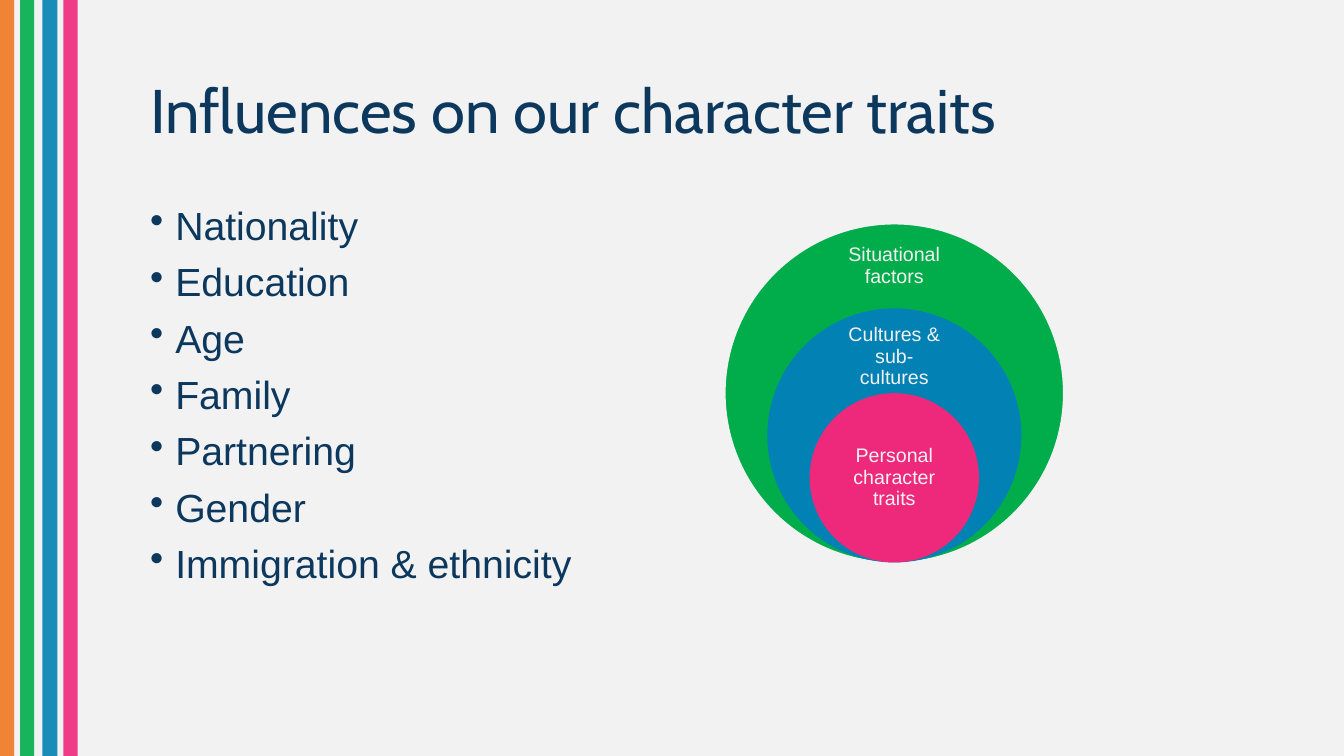
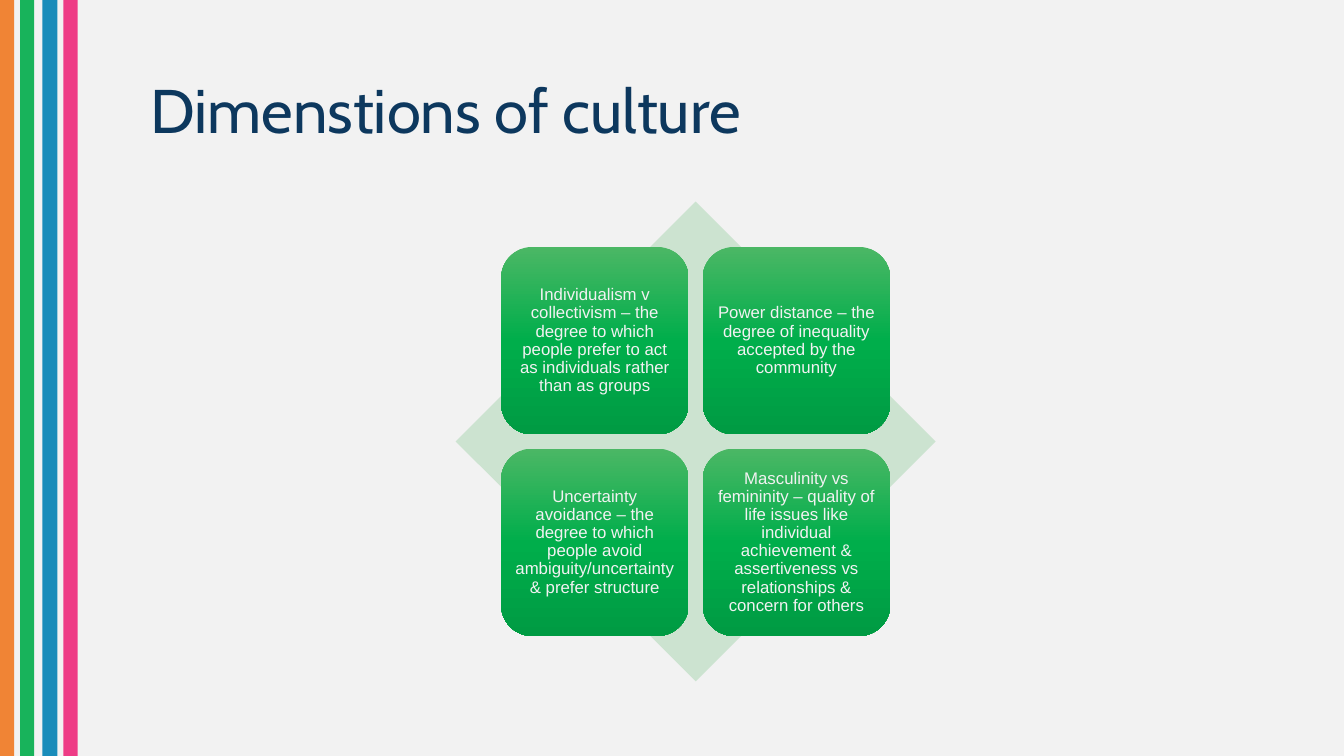
import pptx
import pptx.dml.color
import pptx.enum.shapes
import pptx.enum.text
import pptx.oxml.ns
import pptx.util
from lxml import etree

Inches = pptx.util.Inches
Pt = pptx.util.Pt
qn = pptx.oxml.ns.qn
SHAPE = pptx.enum.shapes.MSO_SHAPE
ALIGN = pptx.enum.text.PP_ALIGN
ANCHOR = pptx.enum.text.MSO_ANCHOR

NAVY, PALE, MINT = "0D385E", "F2F2F2", "CCE3D0"
ORANGE, GREEN, BLUE, PINK = "F07921", "01AD4B", "0281B4", "EE297B"
STRIPES = [(0, 0.14, ORANGE), (0.2, 0.14, GREEN), (0.42, 0.15, BLUE), (0.63, 0.14, PINK)]
CARD_GRADIENT = [(0, "4BB765"), (50, "00AE4B"), (100, "009B43")]
TITLE_BOX = (1.39, 0.4, 8.76, 1.45)
TITLE_FONT = {"name": "Cabin", "size": Pt(44)}
BODY_FONT = {"name": "Arial", "size": Pt(28)}
CIRCLE_FONT = {"name": "Arial", "size": Pt(14)}
CARD_FONT = {"name": "Arial", "size": Pt(12)}

INFLUENCES = ["Nationality", "Education", "Age", "Family", "Partnering", "Gender",
              "Immigration & ethnicity"]
CIRCLES = [
    ("Situational factors", GREEN, 0.17, 0.5),
    ("Cultures & sub-cultures", BLUE, 0.16, 0.64),
    ("Personal character traits", PINK, 0.42, 0.84),
]
DIMENSIONS = [
    "Individualism v collectivism – the degree to which people prefer to act as "
    "individuals rather than as groups",
    "Power distance – the degree of inequality accepted by the community",
    "Uncertainty avoidance – the degree to which people avoid ambiguity/uncertainty "
    "& prefer structure",
    "Masculinity vs femininity – quality of life issues like individual achievement "
    "& assertiveness vs relationships & concern for others",
]


def color(value):
    """Turn a hex string into a colour."""
    return pptx.dml.color.RGBColor.from_string(value)


def apply(target, values):
    """Set every attribute named in a dict of format values."""
    for name, value in values.items():
        setattr(target, name, value)


def place(box):
    """Convert a box in inches to lengths."""
    return [Inches(value) for value in box]


def add_shape(slide, kind, box, fill):
    """Add a flat shape without outline or shadow."""
    shape = slide.shapes.add_shape(kind, *place(box))
    shape.shadow.inherit = False
    shape.fill.solid()
    shape.fill.fore_color.rgb = color(fill)
    shape.line.fill.background()
    return shape


def format_frame(frame, anchor, inset=(0.1, 0.05)):
    """Set wrapping, anchor and insets of a text frame."""
    across, down = map(Inches, inset)
    apply(frame, {"word_wrap": True, "auto_size": pptx.enum.text.MSO_AUTO_SIZE.NONE,
                  "vertical_anchor": anchor, "margin_left": across, "margin_right": across,
                  "margin_top": down, "margin_bottom": down})


def write(paragraph, text, font, text_color, alignment=ALIGN.LEFT):
    """Write one formatted run in a paragraph."""
    apply(paragraph, {"alignment": alignment, "line_spacing": 0.9})
    run = paragraph.add_run()
    run.text = text
    apply(run.font, font)
    run.font.color.rgb = color(text_color)


def add_bullet(paragraph):
    """Give a paragraph a hanging round bullet."""
    properties = paragraph._p.get_or_add_pPr()
    properties.set("marL", str(Inches(0.25)))
    properties.set("indent", str(-Inches(0.25)))
    etree.SubElement(properties, qn("a:buChar"), char="•")


def set_gradient(shape, stops):
    """Fill a shape with a gradient from top to bottom."""
    shape.fill.gradient()
    shape.fill.gradient_angle = 270
    stop_list = shape.element.spPr.find(".//" + qn("a:gsLst"))
    for stop in list(stop_list):
        stop_list.remove(stop)
    for position, value in stops:
        stop = etree.SubElement(stop_list, qn("a:gs"), pos=str(position * 1000))
        etree.SubElement(stop, qn("a:srgbClr"), val=value)


def add_slide(presentation, title):
    """Add a slide with its side stripes and title."""
    slide = presentation.slides.add_slide(presentation.slide_layouts[5])
    for left, width, fill in STRIPES:
        stripe = add_shape(slide, SHAPE.RECTANGLE, (left, 0, width, 7.5), fill)
        fill_color = stripe.element.spPr.find(".//" + qn("a:srgbClr"))
        etree.SubElement(fill_color, qn("a:alpha"), val="90000")
    placeholder = slide.shapes.title
    apply(placeholder, dict(zip(("left", "top", "width", "height"), place(TITLE_BOX))))
    format_frame(placeholder.text_frame, ANCHOR.MIDDLE)
    write(placeholder.text_frame.paragraphs[0], title, TITLE_FONT, NAVY)
    return slide


def add_bullet_list(slide, box, items):
    """Add a bulleted list in the given box."""
    frame = slide.shapes.add_textbox(*place(box)).text_frame
    format_frame(frame, ANCHOR.TOP)
    for index, item in enumerate(items):
        paragraph = frame.add_paragraph() if index else frame.paragraphs[0]
        paragraph.space_before = Pt(10 if index else 0)
        add_bullet(paragraph)
        write(paragraph, item, BODY_FONT, NAVY)


def add_nested_circles(slide, left, top, diameter, circles):
    """Stack circles that shrink by a quarter and share their lowest point."""
    step = diameter / 4
    label_width = 1.18
    for index, (text, fill, label_offset, label_height) in enumerate(circles):
        size = diameter - index * step
        circle_top = top + index * step
        circle = add_shape(slide, SHAPE.OVAL,
                           (left + index * step / 2, circle_top, size, size), fill)
        if index == 0:
            circle.line.color.rgb = color(PALE)
            circle.line.width = Pt(1)
        label = slide.shapes.add_textbox(*place(
            (left + (diameter - label_width) / 2, circle_top + label_offset,
             label_width, label_height)))
        format_frame(label.text_frame, ANCHOR.MIDDLE, (0.11, 0.11))
        write(label.text_frame.paragraphs[0], text, CIRCLE_FONT, PALE, ALIGN.CENTER)


def add_card_matrix(slide, left, top, size, texts):
    """Place four cards in two rows on a diamond."""
    add_shape(slide, SHAPE.DIAMOND, (left, top, size, size), MINT)
    margin, gap = 0.45, 0.14
    card_size = (size - 2 * margin - gap) / 2
    for index, text in enumerate(texts):
        row, column = divmod(index, 2)
        card = add_shape(slide, SHAPE.ROUNDED_RECTANGLE,
                         (left + margin + column * (card_size + gap),
                          top + margin + row * (card_size + gap), card_size, card_size), GREEN)
        set_gradient(card, CARD_GRADIENT)
        format_frame(card.text_frame, ANCHOR.MIDDLE, (0.05, 0.05))
        write(card.text_frame.paragraphs[0], text, CARD_FONT, PALE, ALIGN.CENTER)


def main():
    """Build and save the presentation."""
    presentation = pptx.Presentation()
    apply(presentation, {"slide_width": Inches(13.33), "slide_height": Inches(7.5)})
    background = presentation.slide_master.background.fill
    background.solid()
    background.fore_color.rgb = color(PALE)

    influences = add_slide(presentation, "Influences on our character traits")
    add_bullet_list(influences, (1.39, 2, 5.99, 4.76), INFLUENCES)
    add_nested_circles(influences, 7.19, 2.22, 3.36, CIRCLES)

    dimensions = add_slide(presentation, "Dimenstions of culture")
    add_card_matrix(dimensions, 4.52, 2, 4.76, DIMENSIONS)

    presentation.save("out.pptx")


if __name__ == "__main__":
    main()
